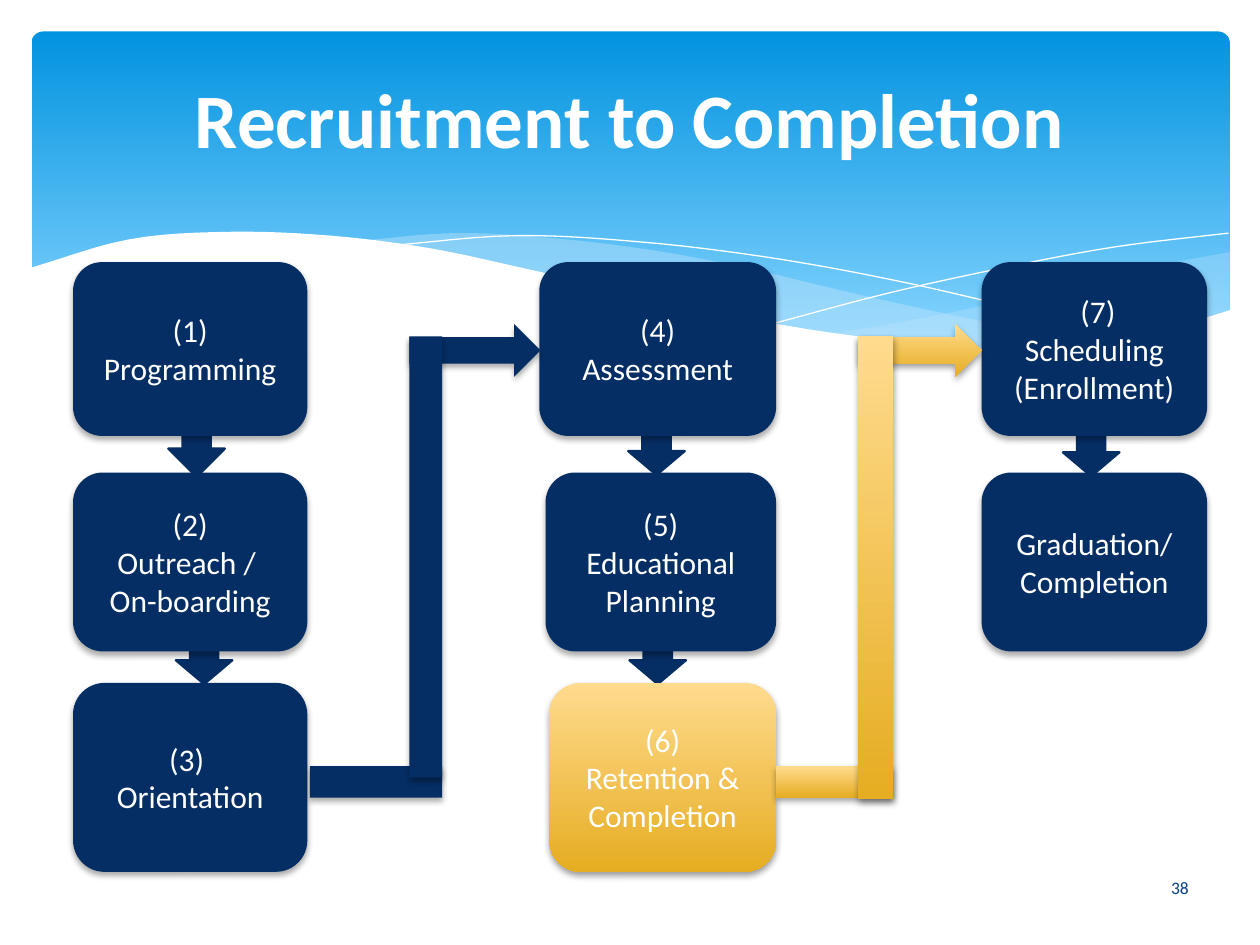
from lxml import etree
from pptx import Presentation
from pptx import util as u
from pptx.dml.color import RGBColor
from pptx.enum import shapes, text
from pptx.oxml.ns import qn

NAVY, WHITE, PALE, NUMBER_BLUE = "052E65", "FFFFFF", "C6E7FC", "073E87"
GOLD, SKY = ("FFDB8E", "E6AD22"), ("0293E0", "83D3FE")
SHADOWS = {NAVY: (32, 3.5, 2.2), GOLD: (38, 4, 2)}
ROUND = shapes.MSO_SHAPE.ROUNDED_RECTANGLE
RECT = shapes.MSO_SHAPE.RECTANGLE
ARROW = shapes.MSO_SHAPE.RIGHT_ARROW


def paint(sp, fill=None, line=None, width=0, end=1, alpha=100, shadow=None):
    sp.shadow.inherit = False
    if fill is None:
        sp.fill.background()
    elif isinstance(fill, tuple):
        sp.fill.gradient()
        sp.fill.gradient_angle = 270
        for stop, color, position in zip(sp.fill.gradient_stops, fill, (0, end)):
            stop.color.rgb = RGBColor.from_string(color)
            stop.position = position
    else:
        sp.fill.solid()
        sp.fill.fore_color.rgb = RGBColor.from_string(fill)
        if alpha < 100:
            clr = sp._element.spPr.find(qn("a:solidFill"))[0]
            etree.SubElement(clr, qn("a:alpha"), val=str(alpha * 1000))
    if line:
        sp.line.color.rgb = RGBColor.from_string(line)
        sp.line.width = u.Pt(width)
    else:
        sp.line.fill.background()
    if shadow:
        opacity, blur, distance = shadow
        effects = sp._element.spPr.find(qn("a:effectLst"))
        outer = etree.SubElement(effects, qn("a:outerShdw"), blurRad=str(u.Pt(blur)),
                                 dist=str(u.Pt(distance)), dir="5400000", rotWithShape="0")
        clr = etree.SubElement(outer, qn("a:srgbClr"), val="000000")
        etree.SubElement(clr, qn("a:alpha"), val=str(opacity * 1000))


def write(sp, content, size, color, bold=False):
    tf = sp.text_frame
    tf.word_wrap = True
    tf.vertical_anchor = text.MSO_ANCHOR.MIDDLE
    tf.text = content
    for p in tf.paragraphs:
        p.alignment = text.PP_ALIGN.CENTER
        for r in p.runs:
            r.font.name = "Calibri"
            r.font.size = u.Pt(size)
            r.font.bold = bold
            r.font.color.rgb = RGBColor.from_string(color)


prs = Presentation()
prs.slide_width, prs.slide_height = u.Inches(10), u.Inches(7.5)
s = prs.slides.add_slide(prs.slide_layouts[6])

header = s.shapes.add_shape(ROUND, *map(u.Inches, (0.25, 0.25, 9.51, 2.7)))
header.adjustments[0] = 0.034
paint(header, SKY, end=0.9)

right_wave = [(6.61, 9.76, [2.65, 2.51, 2.34, 2.15, 2]),
              (9.76, 6.61, [2.47, 2.7, 2.78, 2.74, 2.65])]
middle_wave = [(2.86, 8.93, [1.91, 1.85, 1.89, 1.98, 2.12, 2.3, 2.47, 2.62, 2.73]),
               (8.93, 2.86, [2.73, 2.78, 2.76, 2.66, 2.53, 2.37, 2.19, 2.03, 1.91])]
falling_line = [(3.09, 9.07, [1.95, 1.87, 1.92, 2.04, 2.22, 2.45, 2.72])]
rising_line = [(6.13, 9.75, [2.57, 2.33, 2.13, 1.96, 1.85])]
white_wave = [(0.23, 9.77, [2.13, 1.9, 1.84, 1.87, 1.97, 2.14, 2.32, 2.5, 2.64,
                            2.73, 2.77, 2.69, 2.46]),
              (9.77, 0.23, [3.29, 3.29])]
SMOOTHNESS = 6

for edges, style in [(right_wave, {"fill": PALE, "alpha": 29}),
                     (middle_wave, {"fill": PALE, "alpha": 40}),
                     (falling_line, {"line": WHITE}),
                     (rising_line, {"line": WHITE}),
                     (white_wave, {"fill": WHITE})]:
    points = []
    for start, stop, heights in edges:
        gap = (stop - start) / (len(heights) - 1)
        knots = [2 * heights[0] - heights[1], *heights, 2 * heights[-1] - heights[-2]]
        for i, (a, b, c, d) in enumerate(zip(knots, knots[1:], knots[2:], knots[3:])):
            for step in range(SMOOTHNESS):
                t = step / SMOOTHNESS
                y = b + t / 2 * (c - a + t * (2 * a - 5 * b + 4 * c - d
                                              + t * (3 * b - a - 3 * c + d)))
                points.append((u.Inches(start + gap * (i + t)), u.Inches(y)))
        points.append((u.Inches(stop), u.Inches(heights[-1])))
    outline = s.shapes.build_freeform(*points[0])
    outline.add_line_segments(points[1:], close="fill" in style)
    paint(outline.convert_to_shape(), **style)

title = s.shapes.add_textbox(*map(u.Inches, (0.5, 0.25, 9, 1.37)))
write(title, "Recruitment to Completion", 44, WHITE, True)

down_arrows = [(1.56, 3.56, 0.45), (1.62, 5.24, 0.38), (5.21, 3.58, 0.38),
               (5.22, 5.24, 0.38), (8.66, 3.59, 0.38)]
span = 0.45
for center_x, center_y, length in down_arrows:
    box = (center_x - length / 2, center_y - span / 2, length, span)
    sp = s.shapes.add_shape(ARROW, *map(u.Inches, box))
    sp.rotation = 90
    paint(sp, NAVY, line=NAVY, width=1.25)

first_top, row_pitch = 2.08, 1.67
row_heights = [1.38, 1.42, 1.5]
columns = [
    (2.44, [(1.86, NAVY, "(1)\nProgramming"),
            (1.86, NAVY, "(2)\nOutreach / \nOn-boarding"),
            (1.86, NAVY, "(3) \nOrientation")]),
    (6.16, [(1.88, NAVY, "(4)\nAssessment"),
            (1.83, NAVY, "(5)\nEducational Planning"),
            (1.8, GOLD, "(6)\nRetention &\nCompletion")]),
    (9.58, [(1.79, NAVY, " (7)\nScheduling\n(Enrollment)"),
            (1.79, NAVY, "Graduation/ Completion")])]
for right, steps in columns:
    for row, (width, color, label) in enumerate(steps):
        box = (right - width, first_top + row * row_pitch, width, row_heights[row])
        sp = s.shapes.add_shape(ROUND, *map(u.Inches, box))
        paint(sp, color, shadow=SHADOWS[color])
        write(sp, label, 18, WHITE)

for color, start, trunk, thickness, trunk_height, tip in [
        (NAVY, 2.46, 3.25, 0.26, 3.5, 4.29),
        (GOLD, 6.16, 6.81, 0.28, 3.67, 7.79)]:
    for kind, *box in [(RECT, start, 6.08, trunk + thickness - start, 0.25),
                       (ARROW, trunk, 2.57, tip - trunk, 0.42),
                       (RECT, trunk, 2.67, thickness, trunk_height)]:
        sp = s.shapes.add_shape(kind, *map(u.Inches, box))
        paint(sp, color, shadow=SHADOWS[color])

number = s.shapes.add_textbox(*map(u.Inches, (8.73, 6.84, 1.27, 0.4)))
write(number, "38", 10, NUMBER_BLUE)

prs.save("out.pptx")
